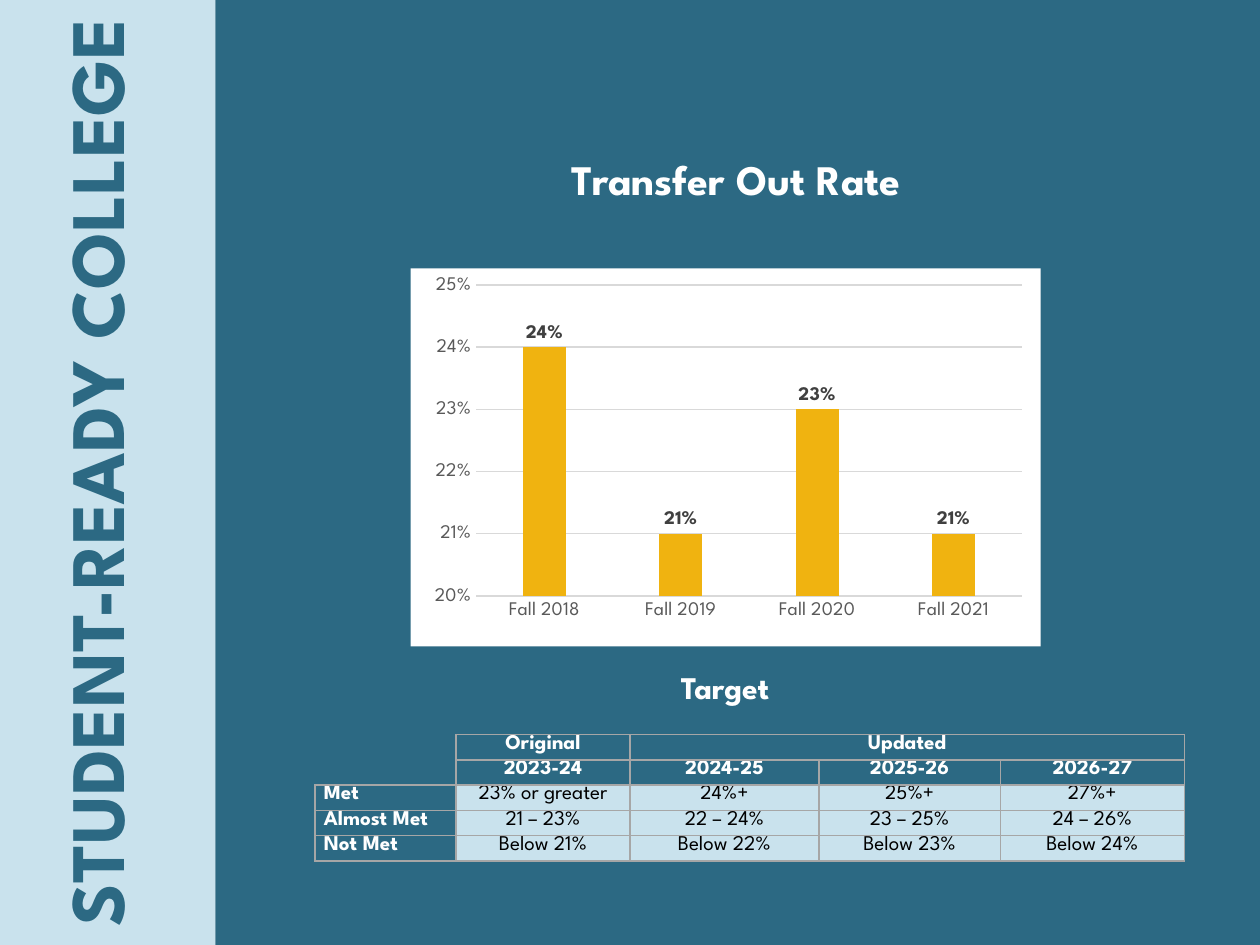
from dataclasses import dataclass

from lxml import etree
from pptx import Presentation
from pptx.chart.data import CategoryChartData
from pptx.dml.color import RGBColor
from pptx.enum.chart import XL_CHART_TYPE as Kind, XL_LABEL_POSITION as Pos
from pptx.enum.chart import XL_TICK_MARK as Tick
from pptx.enum.shapes import MSO_SHAPE as Form
from pptx.enum.text import MSO_AUTO_SIZE as Fit, PP_ALIGN as Align
from pptx.oxml import parse_xml
from pptx.oxml.ns import nsdecls, qn
from pptx.util import Inches, Pt

FONT = "League Spartan"
HUES = {
    "teal": "2C6983", "pale": "C9E2ED", "white": "FFFFFF", "black": "000000",
    "gold": "F0B310", "grid": "D9D9D9", "axis": "595959", "label": "404040",
    "edge": "A6A6A6",
}


@dataclass
class Box:
    left: float
    top: float
    width: float
    height: float

    def emu(self) -> tuple:
        return tuple(map(Inches, (self.left, self.top, self.width, self.height)))


@dataclass
class Panel:
    box: Box
    hue: str


@dataclass
class Label:
    text: str
    box: Box
    size: float
    hue: str = "white"
    turn: float = 0
    after: float = 0


PANELS = [
    Panel(Box(0, 0, 1.71, 7.5), "pale"),
    Panel(Box(1.71, 0, 8.29, 7.5), "teal"),
]
LABELS = [
    Label("STUDENT-READY COLLEGE", Box(-2.63, 2.96, 7.5, 1.58), 44, "teal", 270),
    Label("Transfer Out Rate", Box(2.02, 1.17, 7.65, 0.5), 24, after=12),
    Label("Target", Box(3.87, 5.25, 3.77, 0.4), 18),
]
RATES = {"Fall 2018": 0.24, "Fall 2019": 0.21, "Fall 2020": 0.23, "Fall 2021": 0.21}
WIDTHS = [1.12, 1.38, 1.5, 1.44, 1.46]
ROWS = [
    ["", "Original", "Updated", "", ""],
    ["", "2023-24", "2024-25", "2025-26", "2026-27"],
    ["Met", "23% or greater", "24%+", "25%+", "27%+"],
    ["Almost Met", "21 – 23%", "22 – 24%", "23 – 25%", "24 – 26%"],
    ["Not Met", "Below 21%", "Below 22%", "Below 23%", "Below 24%"],
]
HEADS = 2


def color(hue: str) -> RGBColor:
    return RGBColor.from_string(HUES[hue])


def style(font, size: float, hue: str, bold: bool = False) -> None:
    font.name, font.size, font.bold = FONT, Pt(size), bold
    font.color.rgb = color(hue)


def write(frame, text: str, *, size: float, hue: str, bold: bool = True,
          align=Align.CENTER, after: float = 0) -> None:
    para = frame.paragraphs[0]
    para.alignment = align
    if after:
        para.space_after = Pt(after)
    if text:
        run = para.add_run()
        run.text = text
        style(run.font, size, hue, bold)
    else:
        style(para.font, size, hue, bold)


def add_panel(slide, panel: Panel) -> None:
    shape = slide.shapes.add_shape(Form.RECTANGLE, *panel.box.emu())
    shape.shadow.inherit = False
    shape.fill.solid()
    shape.fill.fore_color.rgb = color(panel.hue)
    shape.line.fill.background()


def add_label(slide, label: Label) -> None:
    shape = slide.shapes.add_textbox(*label.box.emu())
    shape.rotation = label.turn
    frame = shape.text_frame
    frame.word_wrap = True
    frame.auto_size = Fit.SHAPE_TO_FIT_TEXT
    write(frame, label.text, size=label.size, hue=label.hue, after=label.after)


def rule(line, hue: str) -> None:
    line.color.rgb = color(hue)
    line.width = Pt(0.75)


def frame_chart(chart, plot: Box) -> None:
    """Fill the chart area and fix the inner plot area."""
    root = chart.element.find(qn("c:chart"))
    root.addnext(parse_xml(
        f'<c:spPr {nsdecls("c", "a")}><a:solidFill><a:srgbClr val="{HUES["white"]}"/>'
        "</a:solidFill><a:ln><a:noFill/></a:ln></c:spPr>"))
    area = root.find(qn("c:plotArea"))
    for old in area.findall(qn("c:layout")):
        area.remove(old)
    layout = parse_xml(f'<c:layout {nsdecls("c")}><c:manualLayout/></c:layout>')
    parts = [("layoutTarget", "inner"), ("xMode", "edge"), ("yMode", "edge"),
             ("x", plot.left), ("y", plot.top), ("w", plot.width), ("h", plot.height)]
    for name, value in parts:
        etree.SubElement(layout[0], qn(f"c:{name}"), val=str(value))
    area.insert(0, layout)


def add_rates(slide, box: Box) -> None:
    data = CategoryChartData(number_format="0%")
    data.categories = list(RATES)
    data.add_series("Series 1", list(RATES.values()))
    chart = slide.shapes.add_chart(Kind.COLUMN_CLUSTERED, *box.emu(), data).chart
    chart.has_title = chart.has_legend = False
    style(chart.font, 11, "black")
    frame_chart(chart, Box(0.104, 0.044, 0.866, 0.823))

    # Axes
    cats, vals = chart.category_axis, chart.value_axis
    for axis in (cats, vals):
        axis.major_tick_mark = axis.minor_tick_mark = Tick.NONE
        style(axis.tick_labels.font, 11, "axis")
    rule(cats.format.line, "grid")
    vals.format.line.fill.background()
    vals.minimum_scale, vals.maximum_scale, vals.major_unit = 0.2, 0.25, 0.01
    rule(vals.major_gridlines.format.line, "grid")
    vals.tick_labels.number_format = "0%"
    vals.tick_labels.number_format_is_linked = False

    # Columns and their labels
    plot = chart.plots[0]
    plot.gap_width, plot.overlap, plot.vary_by_categories = 219, -27, False
    bars = plot.series[0]
    bars.format.fill.solid()
    bars.format.fill.fore_color.rgb = color("gold")
    tags = bars.data_labels
    tags.show_value, tags.position = True, Pos.OUTSIDE_END
    tags.number_format, tags.number_format_is_linked = "0%", False
    style(tags.font, 11, "label", True)


def set_edges(cell, sides: str) -> None:
    props = cell._tc.get_or_add_tcPr()
    for spot, side in enumerate("LRTB"):
        paint = (f'<a:solidFill><a:srgbClr val="{HUES["edge"]}"/></a:solidFill>'
                 if side in sides else "<a:noFill/>")
        props.insert(spot, parse_xml(
            f'<a:ln{side} {nsdecls("a")} w="{Pt(1)}">{paint}</a:ln{side}>'))


def add_targets(slide, box: Box) -> None:
    table = slide.shapes.add_table(len(ROWS), len(WIDTHS), *box.emu()).table
    for col, width in zip(table.columns, WIDTHS):
        col.width = Inches(width)
    for r, row in enumerate(ROWS):
        table.rows[r].height = Inches(box.height / len(ROWS))
        for c, text in enumerate(row):
            cell = table.cell(r, c)
            cell.margin_left = cell.margin_right = Inches(0.07)
            cell.margin_top = cell.margin_bottom = 0
            head, side = r < HEADS, c == 0
            dark = head or side
            cell.fill.solid()
            cell.fill.fore_color.rgb = color("teal" if dark else "pale")
            corner = "R" if r == 0 else "RB"
            set_edges(cell, corner if head and side else "LRTB")
            write(cell.text_frame, text, size=12, bold=dark,
                  hue="white" if dark else "black",
                  align=Align.LEFT if side else Align.CENTER)
    table.cell(0, 2).merge(table.cell(0, 4))


def main() -> None:
    deck = Presentation()
    deck.slide_width, deck.slide_height = Inches(10), Inches(7.5)
    slide = deck.slides.add_slide(deck.slide_layouts[6])
    for panel in PANELS:
        add_panel(slide, panel)
    for label in LABELS:
        add_label(slide, label)
    add_rates(slide, Box(3.26, 2.13, 5, 3))
    add_targets(slide, Box(2.5, 5.83, 6.9, 1))
    deck.save("out.pptx")


if __name__ == "__main__":
    main()
